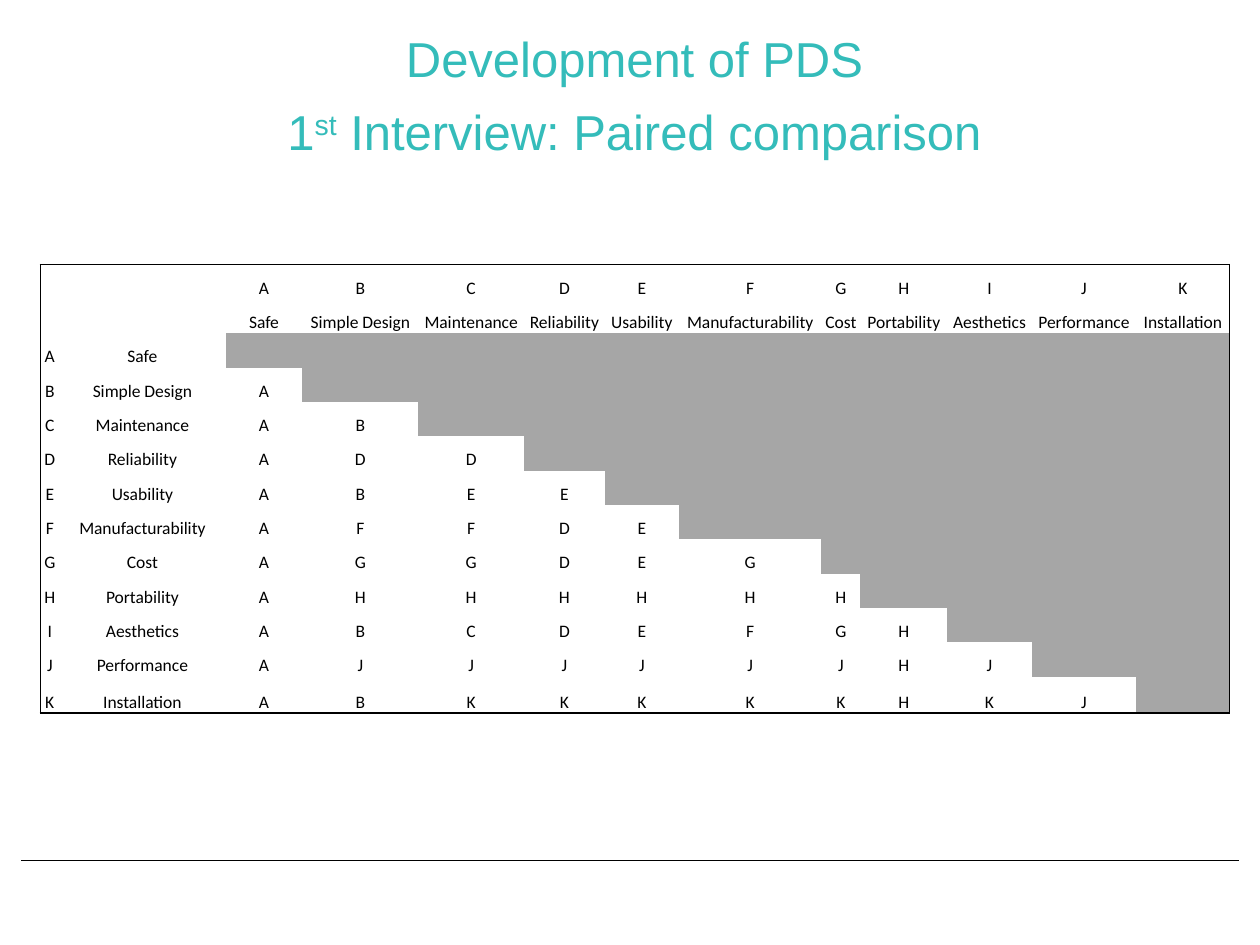
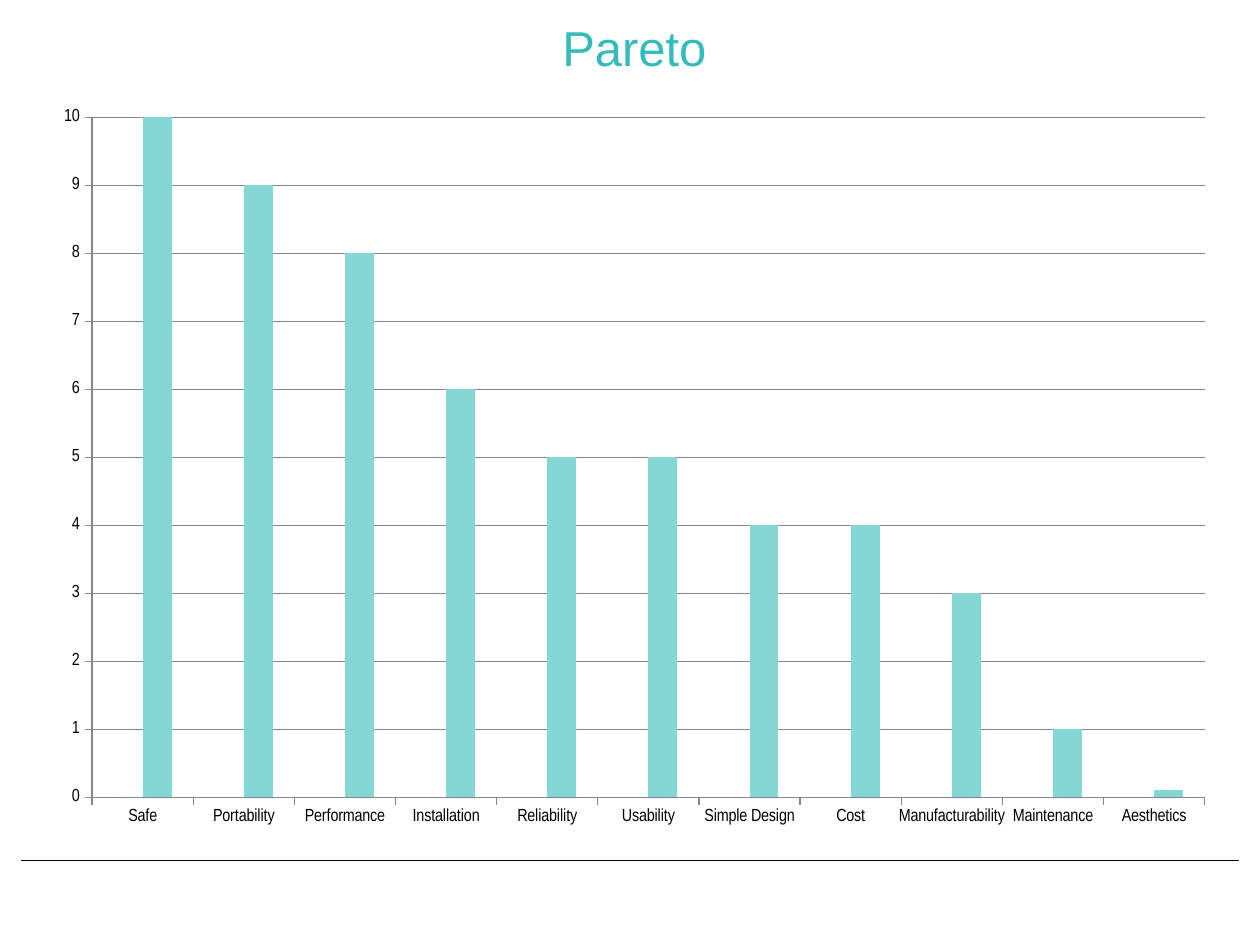
import pptx
import pptx.chart.data
import pptx.dml.color
import pptx.enum.chart
import pptx.enum.shapes
import pptx.enum.text
import pptx.oxml.ns
import pptx.util
from dataclasses import dataclass
from lxml import etree

Inches = pptx.util.Inches
Pt = pptx.util.Pt
qn = pptx.oxml.ns.qn


@dataclass(frozen=True)
class Theme:
    teal: str = "34BCBA"
    pale: str = "85D7D6"
    gray: str = "A6A6A6"
    grid: str = "868686"
    ink: str = "000000"
    head: str = "Arial"
    body: str = "Calibri"
    axis: str = "Arial Narrow"
    big: int = 28
    small: int = 10
    rule: float = 1


THEME = Theme()
LEFT, WIDTH = 0.32, 9.43
PLAIN = "{2D5ABB26-0587-4C30-8999-92F81FD0307C}"  # table style without grid

# Criteria, and the winner of each pair, one row per criterion
NAMES = ["Safe", "Simple Design", "Maintenance", "Reliability", "Usability",
         "Manufacturability", "Cost", "Portability", "Aesthetics",
         "Performance", "Installation"]
KEYS = "ABCDEFGHIJK"
WINS = ["", "A", "AB", "ADD", "ABEE", "AFFDE", "AGGDEG", "AHHHHHH",
        "ABCDEFGH", "AJJJJJJHJ", "ABKKKKKHKJ"]
COLS = [0.15, 1.32, 0.61, 0.92, 0.84, 0.64, 0.59, 1.13, 0.31, 0.69, 0.67,
        0.83, 0.74]
SCORES = {"Safe": 10, "Portability": 9, "Performance": 8, "Installation": 6,
          "Reliability": 5, "Usability": 5, "Simple Design": 4, "Cost": 4,
          "Manufacturability": 3, "Maintenance": 1, "Aesthetics": 0.1}


def color(code):
    return pptx.dml.color.RGBColor.from_string(code)


def write(frame, *parts, size=THEME.small, font=THEME.body, ink=THEME.ink):
    """Write centred text; a part that starts with ^ is raised."""
    para = frame.paragraphs[0]
    para.alignment = pptx.enum.text.PP_ALIGN.CENTER
    for part in parts:
        run = para.add_run()
        run.text = part.lstrip("^")
        run.font.size, run.font.name = Pt(size), font
        run.font.color.rgb = color(ink)
        if part.startswith("^"):
            run.font._element.set("baseline", "30000")
    if not parts:  # keeps an empty row low
        end = etree.SubElement(para._p, qn("a:endParaRPr"))
        end.set("sz", str(size * 100))


def add_title(slide, top, *parts):
    box = slide.shapes.add_textbox(
        Inches(LEFT), Inches(top), Inches(WIDTH), Inches(0.58))
    box.text_frame.word_wrap = True
    box.text_frame.vertical_anchor = pptx.enum.text.MSO_ANCHOR.MIDDLE
    write(box.text_frame, *parts, size=THEME.big, font=THEME.head,
          ink=THEME.teal)


def add_slide(deck):
    """Blank slide with the footer rule."""
    slide = deck.slides.add_slide(deck.slide_layouts[6])
    line = slide.shapes.add_connector(
        pptx.enum.shapes.MSO_CONNECTOR.STRAIGHT,
        Inches(0.17), Inches(6.83), Inches(9.83), Inches(6.83))
    line.line.color.rgb = color(THEME.ink)
    line.line.width = Pt(THEME.rule)
    etree.SubElement(line._element.spPr, qn("a:effectLst"))
    return slide


def add_edge(cell, side):
    edge = etree.SubElement(cell._tc.get_or_add_tcPr(), qn("a:ln" + side))
    edge.set("w", str(Pt(THEME.rule)))
    fill = etree.SubElement(edge, qn("a:solidFill"))
    etree.SubElement(fill, qn("a:srgbClr")).set("val", THEME.ink)


def add_pairs(slide):
    rows = [["", "", *KEYS], ["", "", *NAMES]]
    rows += [[key, name, *wins] for key, name, wins in zip(KEYS, NAMES, WINS)]
    last, end = len(rows) - 1, len(COLS) - 1
    high, foot = 3.56, 0.29
    table = slide.shapes.add_table(
        len(rows), len(COLS), Inches(LEFT), Inches(2.1),
        Inches(WIDTH), Inches(high)).table
    table.first_row = table.horz_banding = False
    table._tbl.tblPr.find(qn("a:tableStyleId")).text = PLAIN
    for col, wide in zip(table.columns, COLS):
        col.width = Inches(wide)
    for r, row in enumerate(rows):
        table.rows[r].height = Inches(
            foot if r == last else (high - foot) / last)
        for c in range(len(COLS)):
            cell = table.cell(r, c)
            cell.margin_left = cell.margin_right = Inches(0.01)
            cell.margin_top, cell.margin_bottom = Inches(0.01), 0
            cell.vertical_anchor = pptx.enum.text.MSO_ANCHOR.BOTTOM
            # Outer frame only
            sides = {"L": c == 0, "R": c == end, "T": r == 0, "B": r == last}
            for side, drawn in sides.items():
                if drawn:
                    add_edge(cell, side)
            # Gray where no pair is compared
            if c < len(row):
                cell.fill.background()
            else:
                cell.fill.solid()
                cell.fill.fore_color.rgb = color(THEME.gray)
            word = row[c] if c < len(row) else ""
            write(cell.text_frame, *([word] if word else []))


def add_pareto(slide):
    data = pptx.chart.data.CategoryChartData()
    data.categories = list(SCORES)
    data.add_series("Series 1", [0] + [None] * (len(SCORES) - 1))
    data.add_series("Series 2", list(SCORES.values()))
    chart = slide.shapes.add_chart(
        pptx.enum.chart.XL_CHART_TYPE.COLUMN_CLUSTERED,
        Inches(LEFT), Inches(0.75), Inches(WIDTH), Inches(5.92), data).chart
    chart.has_title = chart.has_legend = False
    chart.font.size, chart.font.name = Pt(THEME.small), THEME.axis
    chart.font.color.rgb = color(THEME.ink)
    # Bars
    plot = chart.plots[0]
    plot.gap_width, plot.overlap = 150, 0
    plot.vary_by_categories = False
    for series, code in zip(plot.series, (THEME.teal, THEME.pale)):
        series.format.fill.solid()
        series.format.fill.fore_color.rgb = color(code)
    # Axes
    scale = chart.value_axis
    scale.minimum_scale, scale.maximum_scale = 0, 10
    scale.major_unit = 1
    scale.has_major_gridlines = True
    for axis in (scale, chart.category_axis):
        axis.major_tick_mark = pptx.enum.chart.XL_TICK_MARK.OUTSIDE
    for part in (scale, chart.category_axis, scale.major_gridlines):
        part.format.line.color.rgb = color(THEME.grid)
        part.format.line.width = Pt(0.75)


def main():
    deck = pptx.Presentation()
    deck.slide_width, deck.slide_height = Inches(10), Inches(7.5)

    # Paired comparison
    slide = add_slide(deck)
    add_title(slide, 0.75, "1", "^st", " Interview: Paired comparison")
    add_pairs(slide)
    add_title(slide, 0.17, "Development of PDS")

    # Pareto
    slide = add_slide(deck)
    add_title(slide, 0.08, "Pareto")
    add_pareto(slide)

    deck.save("out.pptx")


if __name__ == "__main__":
    main()
